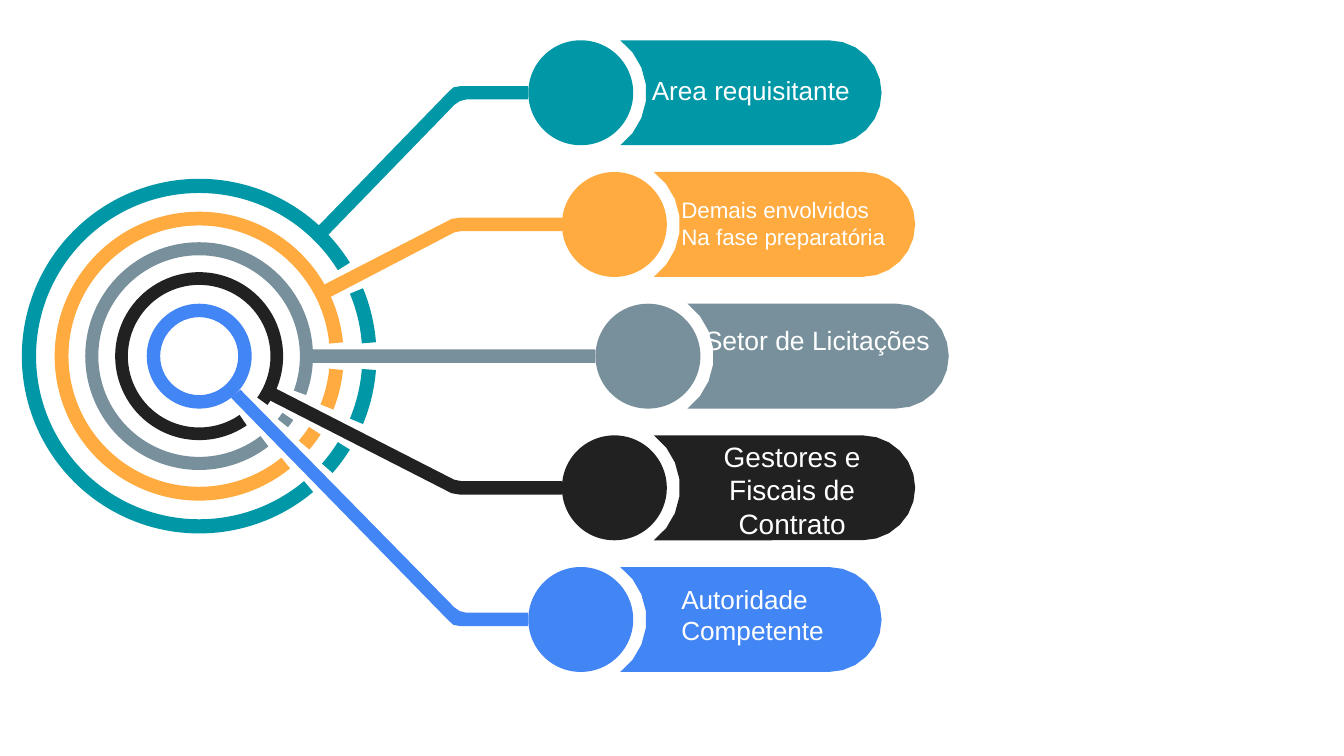
"""Build a slide of concentric rings linked to five labelled pills."""
from math import cos, radians, sin

from pptx import Presentation
from pptx.dml.color import RGBColor
from pptx.enum.shapes import MSO_SHAPE
from pptx.enum.text import MSO_AUTO_SIZE, PP_ALIGN
from pptx.util import Pt

OVAL, DONUT, RECT = MSO_SHAPE.OVAL, MSO_SHAPE.DONUT, MSO_SHAPE.RECTANGLE
BLOCK_ARC = MSO_SHAPE.BLOCK_ARC
LEFT, CENTER = PP_ALIGN.LEFT, PP_ALIGN.CENTER
FIT = MSO_AUTO_SIZE.SHAPE_TO_FIT_TEXT

THEME = {
    "font": "Arial", "text": "FFFFFF",
    "teal": "0097A7", "orange": "FFAB40", "gray": "78909C",
    "black": "212121", "blue": "4285F4",
    "small": 12, "normal": 14, "medium": 14.2, "large": 15,
}
STEEP = ([(240.5, -0.7), (243, -2.9), (247, -3.6)],
         [(249.8, 3.6), (246.3, 4.5), (243.4, 6.5)])
GENTLE = ([(241.9, -2.9), (246.2, -3.6)], [(247, 3.6), (243.4, 4.3)])
BRANCHES = [
    {"color": "teal", "knob_x": 283, "radii": (95, 87.4),
     "spans": [(-22.5, -4.5), (4.5, 22.5), (31.8, 41.2), (50, 328.2)],
     "bend": STEEP, "side": 1, "foot": [(170.6, 121), (175.7, 126)],
     "lines": ["Area requisitante"], "size": "normal",
     "box": (349.2, 39.6, 119.5, 17.3), "align": LEFT, "wrap": False},
    {"color": "orange", "knob_x": 301, "radii": (77.4, 70),
     "spans": [(5.5, 21.7), (32.8, 40.3), (51, 354.5)],
     "bend": GENTLE, "side": 1, "foot": [(173.5, 152.6), (177.1, 159.1)],
     "lines": ["Demais envolvidos", "Na fase preparatória"], "size": "small",
     "box": (365, 105.1, 126, 28.8), "align": LEFT, "wrap": False},
    {"color": "gray", "knob_x": 319, "radii": (61, 54),
     "spans": [(34.2, 38.7), (52.5, 380)],
     "bend": None, "side": 1, "foot": [(167.5, 187.2)],
     "lines": ["Setor de Licitações"], "size": "medium",
     "box": (376.6, 173.5, 122.4, 34.6), "align": CENTER, "wrap": True},
    {"color": "black", "knob_x": 301, "radii": (45, 38.2),
     "spans": [(55.5, 395.5)],
     "bend": GENTLE, "side": -1, "foot": [(144.7, 214.6), (147.6, 208.1)],
     "lines": ["Gestores e Fiscais de Contrato"], "size": "large",
     "box": (375.8, 235.4, 97.2, 54.7), "align": CENTER, "wrap": True},
    {"color": "blue", "knob_x": 283, "radii": (28.1, 20.9), "spans": [],
     "bend": STEEP, "side": -1, "foot": [(123.8, 213.1), (128.9, 208.8)],
     "lines": ["Autoridade", "Competente"], "size": "normal",
     "box": (365, 312.5, 80, 33.8), "align": LEFT, "wrap": False},
]
HUB = (106.7, 190.8)
KNOB_R, PILL_CUT_R, PILL_CUT_ANGLE, CAP_OFFSET = 28.1, 35.2, 53, 133.1
FIRST_Y, PITCH, LINK_W = 49.7, 70.55, 7.2
ARC_STEP, ARC_UNITS_PER_DEGREE = 15, 0.6


def rgb(name):
    return RGBColor.from_string(THEME[name])


def arc(cx, cy, radius, start, end):
    """Return points along an arc, clockwise from east in degrees."""
    steps = round(abs(end - start) / ARC_STEP)
    angles = [radians(start + (end - start) * k / steps) for k in range(steps + 1)]
    return [(cx + radius * cos(a), cy + radius * sin(a)) for a in angles]


def paint(sp, color):
    sp.shadow.inherit = False
    sp.fill.solid()
    sp.fill.fore_color.rgb = rgb(color)
    sp.line.fill.background()


def add_preset(s, kind, x, y, w, h, color):
    sp = s.shapes.add_shape(kind, Pt(x), Pt(y), Pt(w), Pt(h))
    paint(sp, color)
    return sp


def add_round(s, kind, cx, cy, radius, color):
    return add_preset(s, kind, cx - radius, cy - radius, 2 * radius, 2 * radius, color)


def add_outline(s, points, color):
    start, *rest = [(Pt(x), Pt(y)) for x, y in points]
    builder = s.shapes.build_freeform(*start)
    builder.add_line_segments(rest, close=True)
    paint(builder.convert_to_shape(), color)


def add_ring(s, b):
    outer, inner = b["radii"]
    thickness = (outer - inner) / (2 * outer)
    for start, end in b["spans"]:
        sp = add_round(s, BLOCK_ARC, *HUB, outer, b["color"])
        sp.adjustments[0] = start % 360 * ARC_UNITS_PER_DEGREE
        sp.adjustments[1] = end % 360 * ARC_UNITS_PER_DEGREE
        sp.adjustments[2] = thickness
    if not b["spans"]:
        add_round(s, DONUT, *HUB, outer, b["color"]).adjustments[0] = thickness


def add_link(s, b, cy):
    x, half = b["knob_x"], LINK_W / 2
    if b["bend"]:
        outer, inner = [[(px, cy + b["side"] * dy) for px, dy in edge]
                        for edge in b["bend"]]
        tip = [(x, cy - b["side"] * half), (x, cy + b["side"] * half)]
        add_outline(s, [b["foot"][0], *outer, *tip, *inner, b["foot"][1]], b["color"])
    else:
        left, top = b["foot"][0]
        add_preset(s, RECT, left, top, x - left, LINK_W, b["color"])


def add_pill(s, b, cy):
    cx = b["knob_x"] + KNOB_R
    add_round(s, OVAL, cx, cy, KNOB_R, b["color"])
    cut = arc(cx, cy, PILL_CUT_R, PILL_CUT_ANGLE, -PILL_CUT_ANGLE)
    add_outline(s, cut + arc(cx + CAP_OFFSET, cy, KNOB_R, -90, 90), b["color"])


def add_label(s, b):
    tf = s.shapes.add_textbox(*map(Pt, b["box"])).text_frame
    tf.margin_left = tf.margin_right = tf.margin_top = tf.margin_bottom = 0
    tf.word_wrap = b["wrap"]
    tf.auto_size = FIT
    for i, line in enumerate(b["lines"]):
        p = tf.add_paragraph() if i else tf.paragraphs[0]
        p.alignment = b["align"]
        r = p.add_run()
        r.text = line
        r.font.name = THEME["font"]
        r.font.size = Pt(THEME[b["size"]])
        r.font.color.rgb = rgb("text")


def main():
    prs = Presentation()
    prs.slide_width, prs.slide_height = Pt(720), Pt(405)
    s = prs.slides.add_slide(prs.slide_layouts[6])
    for i, b in enumerate(BRANCHES):
        cy = FIRST_Y + PITCH * i
        add_pill(s, b, cy)
        add_link(s, b, cy)
        add_ring(s, b)
    for b in BRANCHES:
        add_label(s, b)
    prs.save("out.pptx")


if __name__ == "__main__":
    main()
